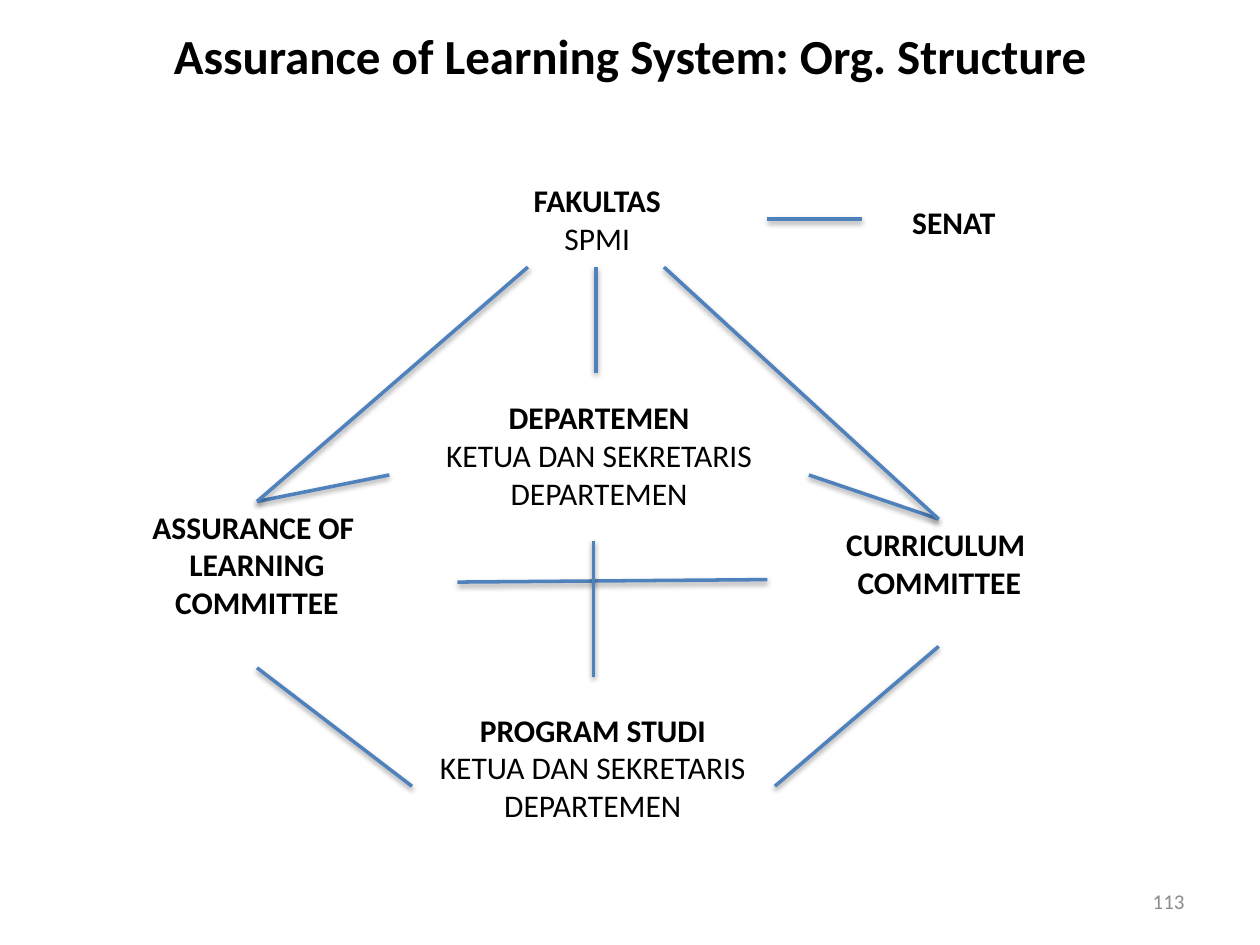
from lxml.etree import fromstring
from pptx import Presentation
from pptx.dml.color import RGBColor
from pptx.enum.shapes import MSO_CONNECTOR
from pptx.enum.text import MSO_ANCHOR, PP_ALIGN
from pptx.util import Inches, Pt

BLACK = RGBColor(0x00, 0x00, 0x00)
BLUE = RGBColor(0x4F, 0x81, 0xBD)
GRAY = RGBColor(0x8C, 0x8C, 0x8C)
FONT = "Calibri"

TITLE = "Assurance of Learning System: Org. Structure"
PAGE = "113"

# Units: (left, top, width, height), then (text, bold) per paragraph
STAFF = ("KETUA DAN SEKRETARIS DEPARTEMEN", False)
UNITS = [
    ((3.38, 1.39, 2.72, 1.01), [("FAKULTAS", True), ("SPMI", False)]),
    ((3.09, 3.11, 3.33, 1.31), [("DEPARTEMEN", True), STAFF]),
    ((3.27, 5.59, 2.87, 1.31), [("PROGRAM STUDI", True), STAFF]),
    ((0.81, 3.98, 2.46, 1.31), [("ASSURANCE OF ", True), ("LEARNING COMMITTEE", True)]),
    ((6.47, 4.12, 1.97, 1.01), [("CURRICULUM ", True), ("COMMITTEE", True)]),
    ((6.94, 1.56, 1.26, 0.4), [("SENAT", True)]),
]

# Points where several links meet
ASSURANCE_TOP = (2.04, 3.98)
CURRICULUM_TOP = (7.45, 4.12)
LINKS = [
    ((6.09, 1.74), (6.84, 1.74)),    # faculty - senate
    ((3.63, 4.62), (6.09, 4.6)),     # committee - committee
    ((4.71, 4.29), (4.71, 5.37)),    # department - study program
    ((4.73, 2.12), (4.73, 2.96)),    # faculty - department
    ((6.42, 3.77), CURRICULUM_TOP),  # department - committees
    ((3.09, 3.77), ASSURANCE_TOP),
    (ASSURANCE_TOP, (4.19, 2.12)),   # committees - faculty
    (CURRICULUM_TOP, (5.27, 2.12)),
    ((7.45, 5.13), (6.15, 6.24)),    # committees - study program
    ((2.04, 5.3), (3.27, 6.24)),
]

SHADOW = (
    '<a:effectLst xmlns:a="http://schemas.openxmlformats.org/drawingml/2006/main">'
    '<a:outerShdw blurRad="40000" dist="20000" dir="5400000" rotWithShape="0">'
    '<a:srgbClr val="000000"><a:alpha val="38000"/></a:srgbClr>'
    '</a:outerShdw></a:effectLst>'
)


def format_paragraph(p, text, size, color, bold, align):
    p.text = text
    p.alignment = align
    p.font.name = FONT
    p.font.size = Pt(size)
    p.font.bold = bold
    p.font.color.rgb = color


def add_text(slide, box, lines, size=18, color=BLACK,
             align=PP_ALIGN.CENTER, anchor=MSO_ANCHOR.TOP):
    tf = slide.shapes.add_textbox(*map(Inches, box)).text_frame
    tf.word_wrap = True
    tf.vertical_anchor = anchor
    for i, (text, bold) in enumerate(lines):
        p = tf.add_paragraph() if i else tf.paragraphs[0]
        format_paragraph(p, text, size, color, bold, align)


def add_link(slide, start, end):
    line = slide.shapes.add_connector(
        MSO_CONNECTOR.STRAIGHT, *map(Inches, start + end))
    line.line.color.rgb = BLUE
    line.line.width = Pt(2)
    line._element.spPr.append(fromstring(SHADOW))


def main():
    prs = Presentation()
    prs.slide_width, prs.slide_height = Inches(10), Inches(7.5)
    slide = prs.slides.add_slide(prs.slide_layouts[5])

    # Title
    title = slide.shapes.title
    title.left, title.top, title.width, title.height = map(
        Inches, (0.5, 0.13, 9, 0.61))
    title.text_frame.vertical_anchor = MSO_ANCHOR.MIDDLE
    format_paragraph(title.text_frame.paragraphs[0], TITLE, 28, BLACK, True,
                     PP_ALIGN.CENTER)

    # Organisation chart
    for box, lines in UNITS:
        add_text(slide, box, lines)
    for start, end in LINKS:
        add_link(slide, start, end)

    # Page number
    add_text(slide, (7.17, 6.95, 2.33, 0.4), [(PAGE, False)], 12, GRAY,
             PP_ALIGN.RIGHT, MSO_ANCHOR.MIDDLE)

    prs.save("out.pptx")


if __name__ == "__main__":
    main()
